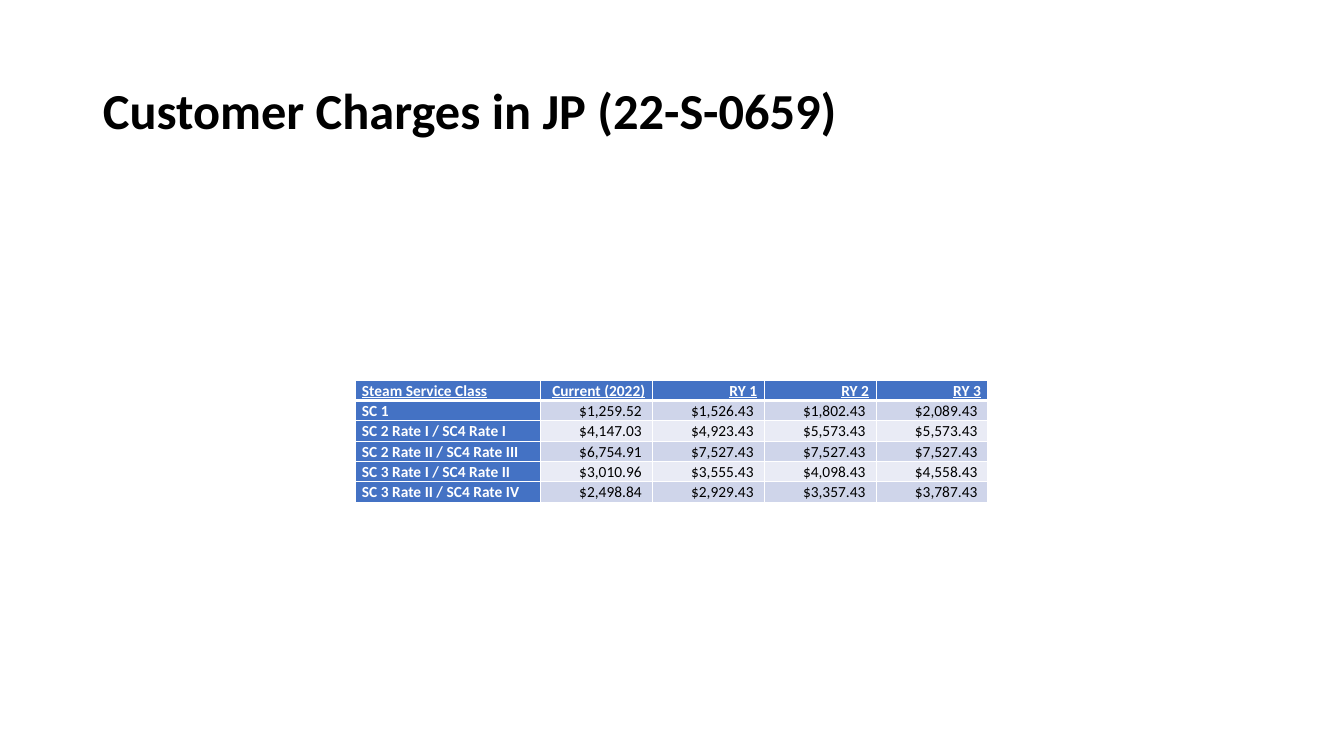
import pptx
import pptx.util
import pptx.dml.color
import pptx.enum.text
import lxml.etree
from pptx.util import Inches

TINTS = {"head": "4472C4", "odd": "CFD5EA", "even": "E9EBF5",
         "white": "FFFFFF", "black": "000000"}
ROWS = [
    ["Steam Service Class", "Current (2022)", "RY 1", "RY 2", "RY 3"],
    ["SC 1", "$1,259.52 ", "$1,526.43 ", "$1,802.43 ", "$2,089.43 "],
    ["SC 2 Rate I / SC4 Rate I", "$4,147.03 ", "$4,923.43 ", "$5,573.43 ", "$5,573.43 "],
    ["SC 2 Rate II / SC4 Rate III", "$6,754.91 ", "$7,527.43 ", "$7,527.43 ", "$7,527.43 "],
    ["SC 3 Rate I / SC4 Rate II", "$3,010.96 ", "$3,555.43 ", "$4,098.43 ", "$4,558.43 "],
    ["SC 3 Rate II / SC4 Rate IV", "$2,498.84 ", "$2,929.43 ", "$3,357.43 ", "$3,787.43 "],
]
NS = "http://schemas.openxmlformats.org/drawingml/2006/main"
ALIGN = pptx.enum.text.PP_ALIGN
ANCHOR = pptx.enum.text.MSO_ANCHOR


def style(par, size, tint, bold):
    font = par.runs[0].font
    font.name = "Calibri"
    font.size = pptx.util.Pt(size)
    font.bold = bold
    font.color.rgb = pptx.dml.color.RGBColor.from_string(TINTS[tint])
    return font


def edge(cell, side, width):
    props = cell._tc.get_or_add_tcPr()
    line = lxml.etree.SubElement(props, f"{{{NS}}}{side}", w=str(pptx.util.Pt(width)))
    fill = lxml.etree.SubElement(line, f"{{{NS}}}solidFill")
    lxml.etree.SubElement(fill, f"{{{NS}}}srgbClr", val=TINTS["white"])


deck = pptx.Presentation()
deck.slide_width = Inches(13.33)
deck.slide_height = Inches(7.5)
slide = deck.slides.add_slide(deck.slide_layouts[5])

title = slide.shapes.title
title.left, title.top = Inches(0.92), Inches(0.4)
title.width, title.height = Inches(11.5), Inches(1.45)
frame = title.text_frame
frame.text = "Customer Charges in JP (22-S-0659)"
frame.vertical_anchor = ANCHOR.MIDDLE
par = frame.paragraphs[0]
par.alignment = ALIGN.LEFT
par.line_spacing = 0.9
style(par, 36, "black", True)

table = slide.shapes.add_table(len(ROWS), len(ROWS[0]), Inches(3.52), Inches(3.77),
                               Inches(6.28), Inches(1.21)).table
table.first_col = True
for c, col in enumerate(table.columns):
    col.width = Inches(1.11 if c else 1.84)

for r, row in enumerate(ROWS):
    table.rows[r].height = Inches(0.2)
    for c, text in enumerate(row):
        cell = table.cell(r, c)
        label = r == 0 or c == 0
        cell.margin_left = cell.margin_right = Inches(0.07)
        cell.margin_top = cell.margin_bottom = 0
        cell.vertical_anchor = ANCHOR.BOTTOM
        for side in ("lnL", "lnR", "lnT", "lnB"):
            thick = (r == 0 and side == "lnB") or (r == 1 and side == "lnT")
            edge(cell, side, 3 if thick else 1)
        cell.fill.solid()
        tint = "head" if label else "odd" if r % 2 else "even"
        cell.fill.fore_color.rgb = pptx.dml.color.RGBColor.from_string(TINTS[tint])
        cell.text_frame.text = text
        par = cell.text_frame.paragraphs[0]
        par.alignment = ALIGN.RIGHT if c else ALIGN.LEFT
        par.line_spacing = 1.07
        font = style(par, 11, "white" if label else "black", label)
        font.underline = r == 0

deck.save("out.pptx")
